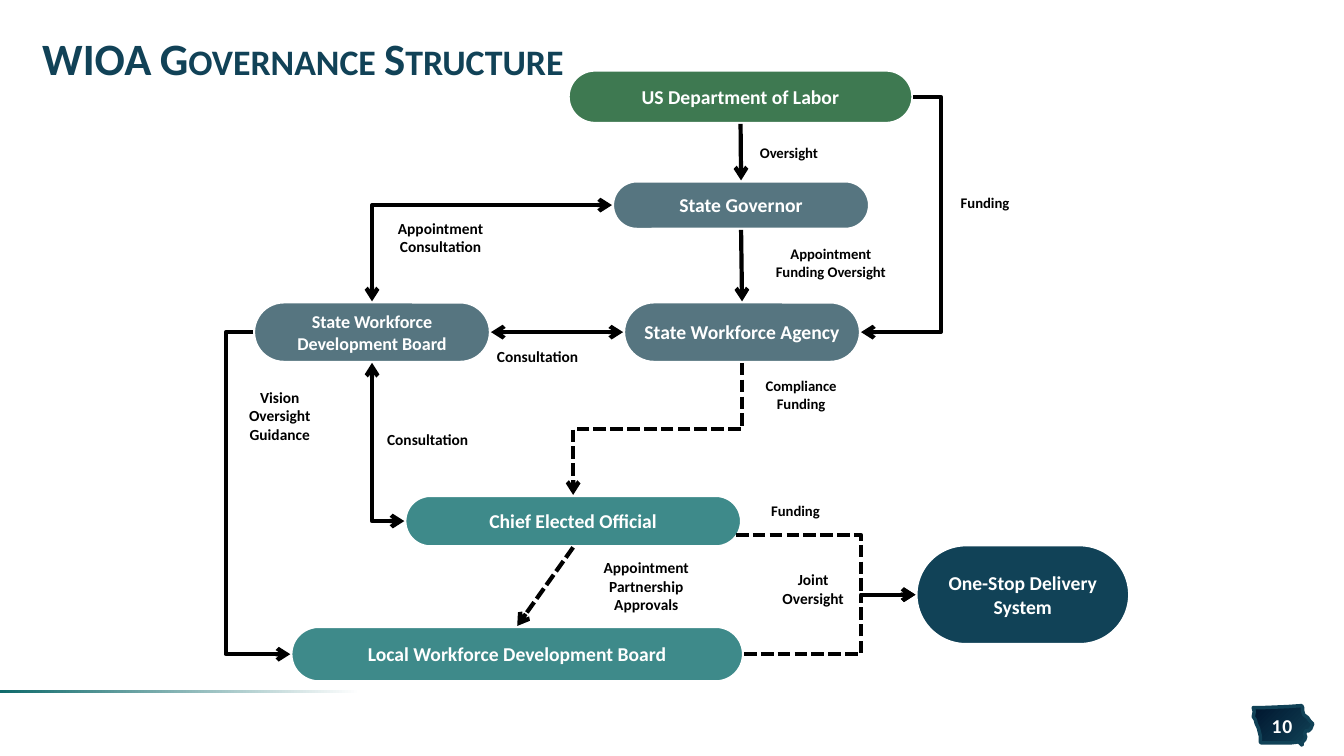
from lxml.etree import SubElement
from pptx import Presentation
from pptx.dml.color import RGBColor
from pptx.enum.dml import MSO_LINE
from pptx.enum.shapes import MSO_CONNECTOR, MSO_SHAPE
from pptx.enum.text import MSO_ANCHOR, PP_ALIGN
from pptx.oxml.ns import qn
from pptx.util import Pt

PX = 9144
THEME = {
    "font": "Calibri", "navy": "114257", "night": "00162E", "teal": "0F6A6B",
    "federal": "3E7951", "state": "567580", "local": "3E8A8A",
    "white": "FFFFFF", "black": "000000",
    "title": 32, "node": 14, "node_tight": 12.9, "label": 11, "label_small": 10.5, "line": 3,
}

TITLE = ("WIOA Governance Structure", (32, 24, 1269, 75))
PAGE = ("10", (1246, 708, 51, 23))
RULE = (0, 685, 380, 3)
STATE_OUTLINE = [
    (1291, 700), (1277, 701), (1253, 702), (1243, 702), (1244, 706), (1243, 711),
    (1245, 714), (1246, 718), (1248, 722), (1249, 726), (1250, 730), (1250, 736),
    (1251, 737), (1280, 737), (1288, 736), (1291, 739), (1292, 738), (1291, 737),
    (1294, 734), (1295, 731), (1294, 728), (1295, 725), (1298, 725), (1300, 723),
    (1302, 718), (1299, 715), (1297, 712), (1293, 709), (1292, 705), (1292, 702),
]

NODES = {
    "labor": ("US Department of Labor", (563, 69, 343, 54), "federal", "node"),
    "governor": ("State Governor", (607, 179, 256, 49), "state", "node"),
    "board": ("State Workforce Development Board", (251, 299, 236, 61), "state", "node_tight"),
    "agency": ("State Workforce Agency", (618, 299, 236, 61), "state", "node"),
    "official": ("Chief Elected Official", (401, 491, 335, 52), "local", "node"),
    "local": ("Local Workforce Development Board", (288, 621, 450, 56), "local", "node"),
    "delivery": ("One-Stop Delivery System", (908, 540, 213, 100), "navy", "node"),
}

STRAIGHT = [
    ("labor", "bottom", "governor", "top", {}),
    ("governor", "bottom", "agency", "top", {}),
    ("board", "right", "agency", "left", {"both": True}),
    ("official", "bottom", "local", "top", {"dashed": True}),
]
CORNERS = [
    ("governor", "left", "board", "top", {"both": True}),
    ("official", "left", "board", "bottom", {"both": True}),
]
OFFICIAL_EXIT = (730, 531)
DETOURS = [
    ("board", "left", "local", "left", 224, {}),
    ("labor", "right", "agency", "right", 933, {}),
    (OFFICIAL_EXIT, None, "delivery", "left", 854, {"dashed": True}),
    ("local", "right", "delivery", "left", 854, {"dashed": True}),
]

LABELS = [
    (["Appointment", "Consultation"], (301, 212, 272, 48), "label", "center"),
    (["Appointment", "Partnership", "Approvals"], (552, 549, 178, 67), "label", "center"),
    (["Vision Oversight", "Guidance"], (222, 380, 111, 67), "label", "center"),
    (["Joint", "Oversight"], (747, 561, 119, 48), "label", "center"),
    (["Consultation"], (374, 422, 139, 29), "label", "left"),
    (["Consultation"], (483, 339, 139, 29), "label", "left"),
    (["Oversight"], (722, 138, 121, 29), "label_small", "center"),
    (["Appointment", "Funding Oversight"], (738, 238, 172, 47), "label_small", "center"),
    (["Compliance", "Funding"], (652, 369, 285, 47), "label_small", "center"),
    (["Funding"], (708, 493, 162, 29), "label_small", "center"),
    (["Funding"], (896, 187, 162, 29), "label_small", "center"),
]


def color(name):
    return RGBColor.from_string(THEME[name])


def emu(values):
    return [round(v * PX) for v in values]


def write(sp, lines, size, ink="white", align="center", middle=True, insets=None, spacing=None, **attrs):
    tf = sp.text_frame
    tf.word_wrap = True
    tf.vertical_anchor = MSO_ANCHOR.MIDDLE if middle else MSO_ANCHOR.TOP
    if insets:
        tf.margin_left, tf.margin_top, tf.margin_right, tf.margin_bottom = emu(insets)
    tf.text = "\n".join(lines)
    for p in tf.paragraphs:
        p.alignment = PP_ALIGN.CENTER if align == "center" else PP_ALIGN.LEFT
        if spacing:
            p.line_spacing = spacing
        for r in p.runs:
            r.font.name, r.font.size, r.font.bold = THEME["font"], Pt(THEME[size]), True
            r.font.color.rgb = color(ink)
            for key, value in attrs.items():
                r.font._element.set(key, value)


def text_box(lines, box, size, **style):
    write(s.shapes.add_textbox(*emu(box)), lines, size, **style)


def shade(sp, start, end, angle, first=0):
    sp.shadow.inherit = False
    sp.fill.gradient()
    sp.fill.gradient_angle = angle
    for stop, name, position in zip(sp.fill.gradient_stops, (start, end), (first, 1)):
        stop.color.rgb = color(name)
        stop.position = position


def outline(sp, name, width):
    sp.line.color.rgb = color(name)
    sp.line.width = Pt(width)


def node(title, box, fill, size):
    sp = s.shapes.add_shape(MSO_SHAPE.ROUNDED_RECTANGLE, *emu(box))
    sp.adjustments[0] = 0.5
    sp.shadow.inherit = False
    sp.fill.solid()
    sp.fill.fore_color.rgb = color(fill)
    outline(sp, "white", THEME["line"])
    write(sp, [title], size, insets=(0, 0, 0, 0))


def point(place, side):
    if side is None:
        return place
    x, y, w, h = NODES[place][1]
    return {"top": (x + w / 2, y), "bottom": (x + w / 2, y + h),
            "left": (x, y + h / 2), "right": (x + w, y + h / 2)}[side]


def arrow(start, end, preset="line", bend=None, turn=0, both=False, dashed=False):
    kind = MSO_CONNECTOR.STRAIGHT if preset == "line" else MSO_CONNECTOR.ELBOW
    c = s.shapes.add_connector(kind, *emu(start + end))
    outline(c, "black", THEME["line"])
    if dashed:
        c.line.dash_style = MSO_LINE.SQUARE_DOT
    spPr = c._element.spPr
    geometry = spPr.find(qn("a:prstGeom"))
    geometry.set("prst", preset)
    if bend is not None:
        guide = SubElement(geometry.find(qn("a:avLst")), qn("a:gd"))
        guide.set("name", "adj1")
        guide.set("fmla", f"val {round(bend * 100000)}")
    if turn:
        spPr.find(qn("a:xfrm")).set("rot", str(turn * 60000))
    for tag in ["a:headEnd", "a:tailEnd"] if both else ["a:tailEnd"]:
        SubElement(spPr.find(qn("a:ln")), qn(tag)).set("type", "arrow")
    SubElement(spPr, qn("a:effectLst"))


prs = Presentation()
prs.slide_width, prs.slide_height = emu((1333, 750))
s = prs.slides.add_slide(prs.slide_layouts[6])

builder = s.shapes.build_freeform(*STATE_OUTLINE[0], scale=PX)
builder.add_line_segments(STATE_OUTLINE[1:], close=True)
badge = builder.convert_to_shape()
shade(badge, "night", "navy", 315)
outline(badge, "navy", 2.5)

rule = s.shapes.add_shape(MSO_SHAPE.RECTANGLE, *emu(RULE))
shade(rule, "white", "teal", 180, first=0.06)
rule.line.fill.background()

text_box([TITLE[0]], TITLE[1], "title", ink="navy", align="left", spacing=0.85, cap="small")

for spec_row in NODES.values():
    node(*spec_row)

for a, a_side, b, b_side, style in STRAIGHT:
    arrow(point(a, a_side), point(b, b_side), **style)
for a, a_side, b, b_side, style in CORNERS:
    arrow(point(a, a_side), point(b, b_side), "bentConnector2", **style)
for a, a_side, b, b_side, lane, style in DETOURS:
    start, end = point(a, a_side), point(b, b_side)
    arrow(start, end, "bentConnector3", (lane - start[0]) / (end[0] - start[0]), **style)

(x1, y1), (x2, y2) = point("agency", "bottom"), point("official", "top")
cx, cy, half_w, half_h = (x1 + x2) / 2, (y1 + y2) / 2, (y2 - y1) / 2, (x1 - x2) / 2
arrow((cx - half_w, cy - half_h), (cx + half_w, cy + half_h), "bentConnector3", 0.5, turn=90, dashed=True)

for lines, box, size, align in LABELS:
    text_box(lines, box, size, ink="black", align=align, middle=False)

text_box([PAGE[0]], PAGE[1], "node", insets=(0, 5, 0, 5), spc="50")

prs.save("out.pptx")
